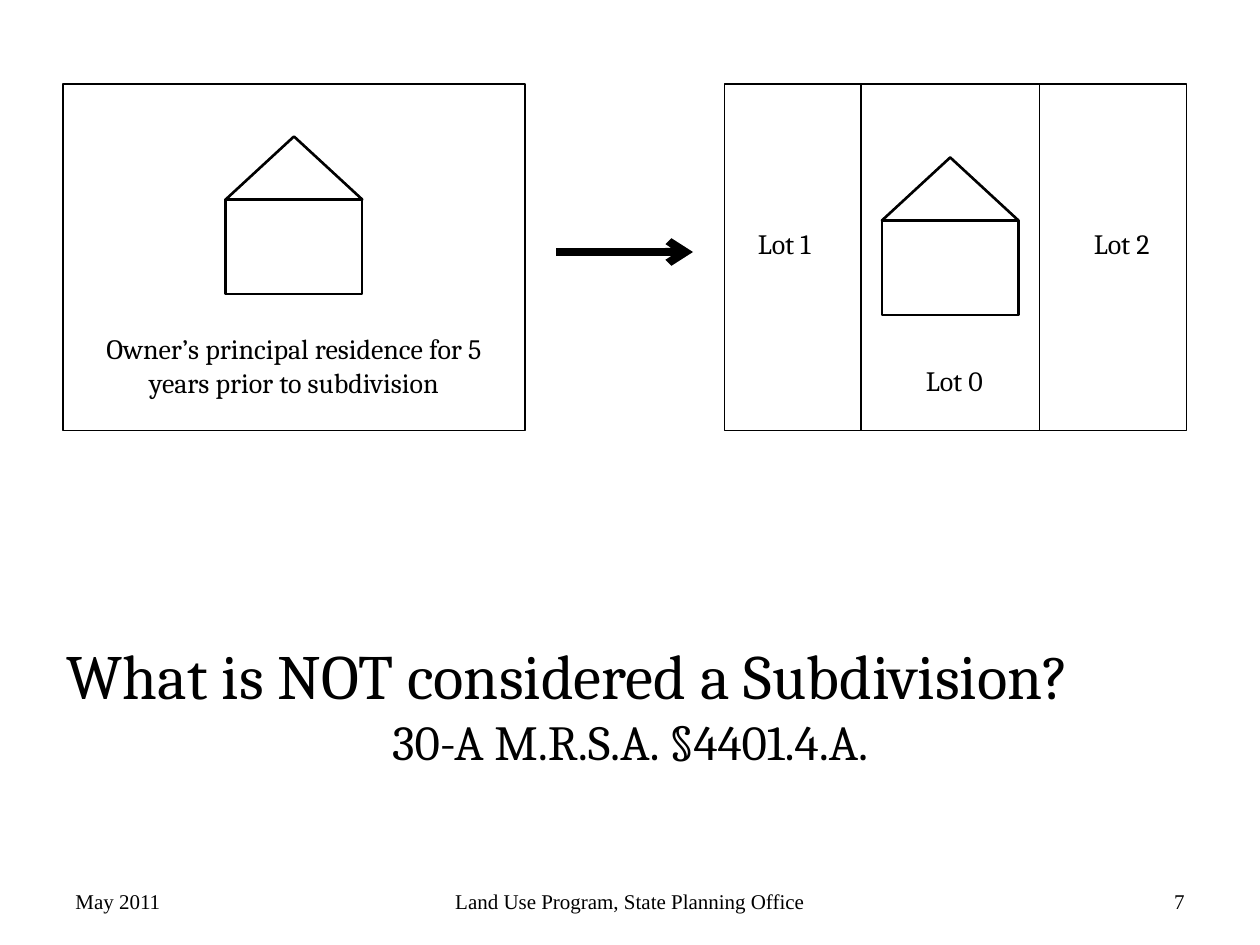
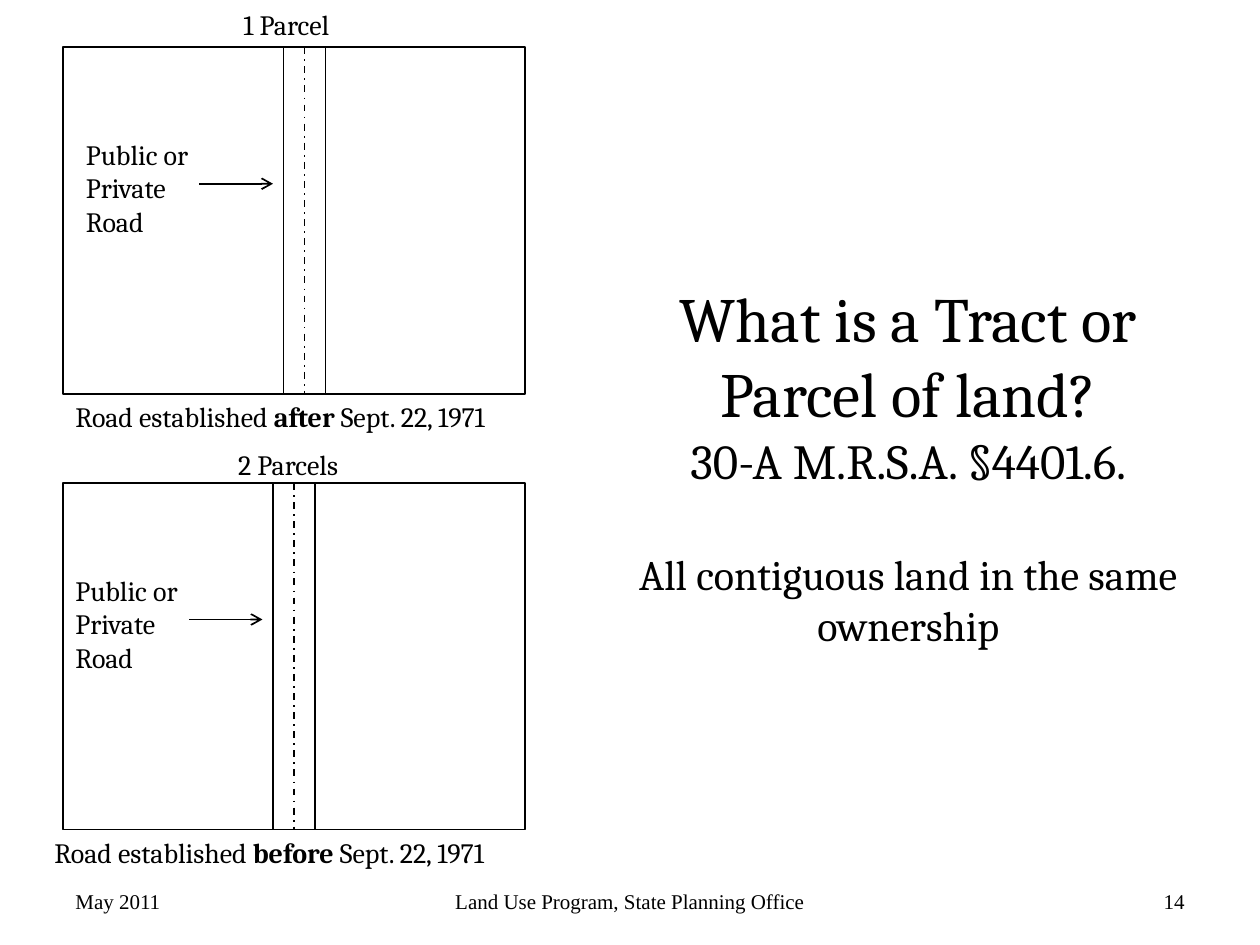
from dataclasses import dataclass

from lxml import etree
from pptx import Presentation
from pptx import util as u
from pptx.dml.color import RGBColor
from pptx.enum import dml, shapes, text
from pptx.oxml import ns

# Grid: 120 columns by 90 rows of 1/12 inch
COLUMNS, ROWS, CELLS_PER_INCH = 120, 90, 12
BLACK, WHITE = "000000", "FFFFFF"
SERIF, FOOTER_FONT = "Cambria", "Times New Roman"
LEFT, CENTER, RIGHT = text.PP_ALIGN.LEFT, text.PP_ALIGN.CENTER, text.PP_ALIGN.RIGHT
TOP, MIDDLE = text.MSO_ANCHOR.TOP, text.MSO_ANCHOR.MIDDLE
RECTANGLE = shapes.MSO_SHAPE.RECTANGLE
TRIANGLE = shapes.MSO_SHAPE.ISOSCELES_TRIANGLE
PLOT_LEFT, PLOT_WIDTH, PLOT_HEIGHT = 6, 44, 33
LABEL_HEIGHT = 4.4


@dataclass(frozen=True)
class Area:
    left: float
    top: float
    width: float
    height: float


@dataclass(frozen=True)
class Line:
    words: tuple[str, ...]  # every second span is bold
    size: float = 16
    align: int = LEFT
    font: str = SERIF
    space_before: float = 0


@dataclass(frozen=True)
class Parcel:
    top: float
    road: float
    count: str
    count_area: Area
    timing: str
    caption_left: float


PARCELS = (
    Parcel(4.5, 27, "1 Parcel", Area(22, 0.1, 12, LABEL_HEIGHT), "after", 6),
    Parcel(46, 26, "2 Parcels", Area(21.5, 42, 13, LABEL_HEIGHT), "before", 4),
)


def grid(cells: float) -> int:
    return u.Inches(cells / CELLS_PER_INCH)


def color(value: str) -> RGBColor:
    return RGBColor.from_string(value)


def place(item, area: Area) -> None:
    item.left, item.top = grid(area.left), grid(area.top)
    item.width, item.height = grid(area.width), grid(area.height)


def write(box, lines: tuple[Line, ...], anchor=TOP) -> None:
    frame = box.text_frame
    frame.word_wrap = True
    frame.auto_size = text.MSO_AUTO_SIZE.NONE
    frame.vertical_anchor = anchor
    for index, line in enumerate(lines):
        para = frame.add_paragraph() if index else frame.paragraphs[0]
        para.alignment = line.align
        para.space_before = u.Pt(line.space_before)
        para.font.name, para.font.size = line.font, u.Pt(line.size)
        para.font.color.rgb = color(BLACK)
        for number, words in enumerate(line.words):
            span = para.add_run()
            span.text = words
            if number % 2:
                span.font.bold = True


def add_label(page, area: Area, *lines: Line, anchor=TOP) -> None:
    box = page.shapes.add_textbox(0, 0, 0, 0)
    place(box, area)
    write(box, lines, anchor)


def add_outline(page, kind, area: Area, weight: float = 1, fill: str = "") -> None:
    shape = page.shapes.add_shape(kind, 0, 0, 0, 0)
    place(shape, area)
    shape.shadow.inherit = False
    if fill:
        shape.fill.solid()
        shape.fill.fore_color.rgb = color(fill)
    else:
        shape.fill.background()
    shape.line.color.rgb = color(BLACK)
    shape.line.width = u.Pt(weight)


def add_line(page, x1: float, y1: float, x2: float, y2: float,
             weight: float = 1, dashed: bool = False, arrow: bool = False) -> None:
    line = page.shapes.add_connector(
        shapes.MSO_CONNECTOR.STRAIGHT, grid(x1), grid(y1), grid(x2), grid(y2))
    line.line.color.rgb = color(BLACK)
    line.line.width = u.Pt(weight)
    if dashed:
        line.line.dash_style = dml.MSO_LINE.DASH_DOT
    if arrow:
        outline = line.line._get_or_add_ln()
        etree.SubElement(outline, ns.qn("a:tailEnd"), type="arrow")
    etree.SubElement(line._element.spPr, ns.qn("a:effectLst"))


def add_house(page, left: float, top: float) -> None:
    width, roof, walls = 13, 6, 9
    add_outline(page, RECTANGLE, Area(left, top + roof, width, walls), 1.5)
    add_outline(page, TRIANGLE, Area(left, top, width, roof), 1.5)


def add_page(deck, number: int, title_area: Area, *title: Line):
    page = deck.slides.add_slide(deck.slide_layouts[5])
    place(page.shapes.title, title_area)
    write(page.shapes.title, title)
    footers = (
        (6, 28, "May 2011", LEFT),
        (41, 38, "Land Use Program, State Planning Office", CENTER),
        (86, 28, str(number), RIGHT),
    )
    for left, width, words, align in footers:
        add_label(page, Area(left, 83.4, width, 4.8),
                  Line((words,), 12, align, FOOTER_FONT), anchor=MIDDLE)
    return page


def build_lots(deck) -> None:
    page = add_page(
        deck, 7, Area(5.16, 60, 109.7, 14.2),
        Line(("What is NOT considered a Subdivision?",), 36),
        Line(("30-A M.R.S.A. §4401.4.A.",), 28, CENTER))
    top, divided_left = 8, 69

    # Undivided plot
    add_outline(page, RECTANGLE, Area(PLOT_LEFT, top, PLOT_WIDTH, PLOT_HEIGHT), fill=WHITE)
    add_house(page, 21.5, 13)
    add_label(page, Area(8, 31, 40, 7.7), Line(
        ("Owner’s principal residence for 5 years prior to subdivision",), align=CENTER))

    # Plot divided into lots
    add_line(page, 53, 24, 66, 24, weight=4.5, arrow=True)
    add_outline(page, RECTANGLE, Area(divided_left, top, PLOT_WIDTH, PLOT_HEIGHT))
    for boundary in (82, 99):
        add_line(page, boundary, top, boundary, top + PLOT_HEIGHT)
    add_house(page, 84, 15)
    for name, left, label_top in (("Lot 1", 71, 21), ("Lot 0", 87, 34), ("Lot 2", 103, 21)):
        add_label(page, Area(left, label_top, 8.4, LABEL_HEIGHT), Line((name,)))


def add_parcel(page, parcel: Parcel) -> None:
    top, road, bottom = parcel.top, parcel.road, parcel.top + PLOT_HEIGHT
    add_outline(page, RECTANGLE, Area(PLOT_LEFT, top, PLOT_WIDTH, PLOT_HEIGHT), fill=WHITE)
    add_label(page, parcel.count_area, Line((parcel.count,)))

    # Road edges and dashed centre line
    for offset in (0, 2, 4):
        add_line(page, road + offset, top, road + offset, bottom, dashed=offset == 2)
    add_label(page, Area(road - 20, top + 8, 15, 11), Line(("Public or Private Road",)))
    add_line(page, road - 8, top + 13, road - 1, top + 13, arrow=True)

    add_label(page, Area(parcel.caption_left, bottom, 52 - parcel.caption_left, LABEL_HEIGHT),
              Line(("Road established ", parcel.timing, " Sept. 22, 1971")))


def build_parcels(deck) -> None:
    page = add_page(
        deck, 14, Area(58, 26, 57, 36.7),
        Line(("What is a Tract or Parcel of land?",), 36, CENTER),
        Line(("30-A M.R.S.A. §4401.6.",), 28, CENTER),
        Line(("All contiguous land in the same ownership",), 24, CENTER, space_before=34))
    for parcel in PARCELS:
        add_parcel(page, parcel)


def main() -> None:
    deck = Presentation()
    deck.slide_width, deck.slide_height = grid(COLUMNS), grid(ROWS)
    build_lots(deck)
    build_parcels(deck)
    deck.save("out.pptx")


if __name__ == "__main__":
    main()
